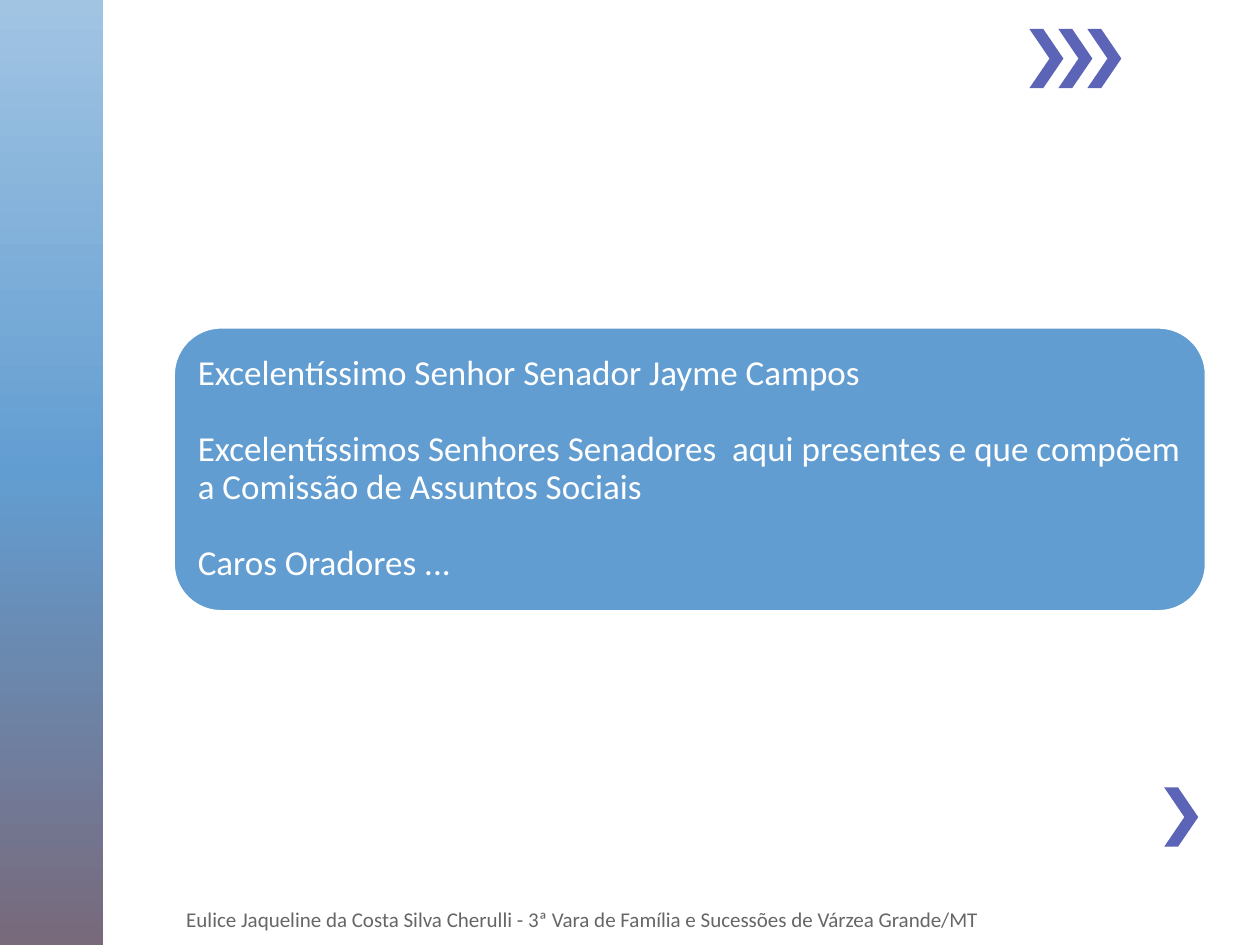
import copy
from dataclasses import dataclass

import pptx
import pptx.dml.color
import pptx.enum.shapes
import pptx.enum.text
import pptx.oxml.ns
import pptx.util
from pptx.dml.color import RGBColor
from pptx.util import Inches, Pt

WHITE = RGBColor(0xFF, 0xFF, 0xFF)
SKY = RGBColor(0xA1, 0xC4, 0xE3)
BLUE = RGBColor(0x62, 0x9D, 0xD1)
MAUVE = RGBColor(0x78, 0x69, 0x7B)
VIOLET = RGBColor(0x5C, 0x64, 0xB7)
GRAY = RGBColor(0x66, 0x66, 0x66)
FONT = "Calibri"
KIND = pptx.enum.shapes.MSO_SHAPE


@dataclass
class Box:
    left: float
    top: float
    width: float
    height: float

    def spot(self) -> tuple:
        return tuple(map(Inches, (self.left, self.top, self.width, self.height)))


@dataclass
class Label:
    box: Box
    lines: list[str]
    size: float
    color: RGBColor
    inset: tuple[float, float]
    pitch: float = 1.0
    gap: float = 0


def draw_band(shapes, box: Box, stops: list[tuple[float, RGBColor]]) -> None:
    """Draw a rectangle with a top-to-bottom gradient of three stops."""
    band = shapes.add_shape(KIND.RECTANGLE, *box.spot())
    band.shadow.inherit = False
    band.line.fill.background()
    band.fill.gradient()
    band.fill.gradient_angle = 270
    first = band._element.spPr.find(".//" + pptx.oxml.ns.qn("a:gs"))
    first.addnext(copy.deepcopy(first))
    for stop, (place, color) in zip(band.fill.gradient_stops, stops):
        stop.position = place
        stop.color.rgb = color


def draw_chevron(shapes, left: float, top: float) -> None:
    wide, high, arm, notch = 0.27, 0.47, 0.11, 0.16
    mid = top + high / 2
    points = [
        (left, top),
        (left + notch, mid),
        (left, top + high),
        (left + arm, top + high),
        (left + wide, mid),
    ]
    pen = shapes.build_freeform(Inches(left + arm), Inches(top))
    pen.add_line_segments([(Inches(x), Inches(y)) for x, y in points])
    mark = pen.convert_to_shape()
    mark.shadow.inherit = False
    mark.fill.solid()
    mark.fill.fore_color.rgb = VIOLET
    mark.line.fill.background()


def draw_card(shapes, box: Box) -> None:
    card = shapes.add_shape(KIND.ROUNDED_RECTANGLE, *box.spot())
    card.shadow.inherit = False
    card.fill.solid()
    card.fill.fore_color.rgb = BLUE
    card.line.color.rgb = WHITE
    card.line.width = Pt(1.25)


def draw_label(shapes, label: Label) -> None:
    frame = shapes.add_textbox(*label.box.spot()).text_frame
    frame.word_wrap = True
    frame.vertical_anchor = pptx.enum.text.MSO_ANCHOR.MIDDLE
    side, edge = map(Inches, label.inset)
    frame.margin_left = frame.margin_right = side
    frame.margin_top = frame.margin_bottom = edge
    for index, line in enumerate(label.lines):
        para = frame.add_paragraph() if index else frame.paragraphs[0]
        para.line_spacing = label.pitch
        para.space_before = Pt(label.gap if index else 0)
        run = para.add_run()
        run.text = line
        run.font.name = FONT
        run.font.size = Pt(label.size)
        run.font.color.rgb = label.color


GREETING = Label(
    Box(1.49, 2.71, 7.97, 2.03),
    [
        "Excelentíssimo Senhor Senador Jayme Campos",
        "Excelentíssimos Senhores Senadores  aqui presentes e que compõem "
        "a Comissão de Assuntos Sociais",
        "Caros Oradores ...",
    ],
    20, WHITE, (0.08, 0.08), pitch=0.9, gap=22,
)
FOOTER = Label(
    Box(1.38, 7.17, 7.83, 0.25),
    ["Eulice Jaqueline da Costa Silva Cherulli - "
     "3ª Vara de Família e Sucessões de Várzea Grande/MT"],
    12, GRAY, (0.1, 0.05),
)


def main() -> None:
    deck = pptx.Presentation()
    deck.slide_width, deck.slide_height = Inches(10), Inches(7.5)
    shapes = deck.slides.add_slide(deck.slide_layouts[6]).shapes

    draw_chevron(shapes, 9.24, 6.25)
    draw_band(shapes, Box(0, 0, 0.82, 7.5), [(0, SKY), (0.5, BLUE), (1, MAUVE)])
    trio = shapes.add_group_shape().shapes
    for step in range(3):
        draw_chevron(trio, 8.17 + 0.23 * step, 0.23)
    panel = shapes.add_group_shape().shapes
    draw_card(panel, Box(1.38, 2.6, 8.19, 2.25))
    draw_label(panel, GREETING)
    draw_label(shapes, FOOTER)
    deck.save("out.pptx")


if __name__ == "__main__":
    main()
